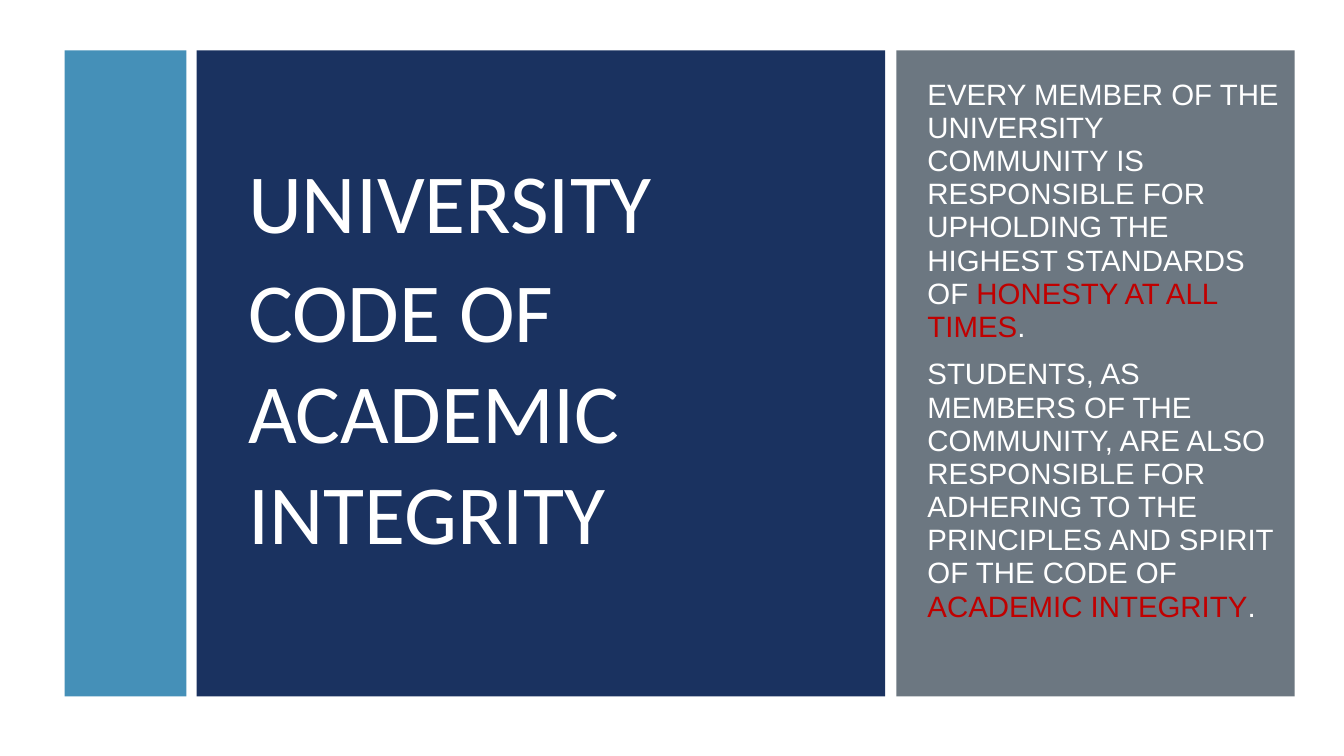
from pptx import Presentation
from pptx.dml.color import RGBColor
from pptx.enum.shapes import MSO_SHAPE
from pptx.enum.text import MSO_ANCHOR, MSO_AUTO_SIZE, PP_ALIGN
from pptx.util import Inches, Pt

WHITE, BLUE, NAVY, GREY, RED = "FFFFFF", "4590B8", "1A3260", "6C7781", "C00000"
PANEL_TOP, PANEL_HEIGHT = 0.5, 6.41


def paint(color_format, hex_color):
    color_format.rgb = RGBColor.from_string(hex_color)


class IntegritySlide:
    """Holds the style and the current slide."""

    heading_font, body_font = "Calibri", "Arial"
    heading_size, body_size = 60, 21

    def __init__(self, presentation):
        self.slide = presentation.slides.add_slide(presentation.slide_layouts[5])
        backdrop = self.slide.background.fill
        backdrop.solid()
        paint(backdrop.fore_color, WHITE)

    def panel(self, left, width, color):
        panel = self.slide.shapes.add_shape(
            MSO_SHAPE.RECTANGLE, Inches(left), Inches(PANEL_TOP),
            Inches(width), Inches(PANEL_HEIGHT))
        panel.shadow.inherit = False
        panel.fill.solid()
        paint(panel.fill.fore_color, color)
        panel.line.fill.background()

    def frame(self, holder):
        frame = holder.text_frame
        frame.word_wrap = True
        frame.auto_size = MSO_AUTO_SIZE.NONE
        frame.vertical_anchor = MSO_ANCHOR.MIDDLE
        return frame

    def format(self, paragraph, font_name, size):
        paragraph.alignment = PP_ALIGN.LEFT
        paragraph.space_after = Pt(6)
        paragraph.font.name = font_name
        paragraph.font.size = Pt(size)
        paint(paragraph.font.color, WHITE)

    def title(self, left, top, width, height, text):
        heading = self.slide.shapes.title
        heading.left, heading.top = Inches(left), Inches(top)
        heading.width, heading.height = Inches(width), Inches(height)
        frame = self.frame(heading)
        frame.text = text
        for paragraph in frame.paragraphs:
            self.format(paragraph, self.heading_font, self.heading_size)
        # Bring the title in front of the panels
        self.slide.shapes._spTree.append(heading._element)

    def statements(self, left, top, width, height, statements):
        box = self.slide.shapes.add_textbox(
            Inches(left), Inches(top), Inches(width), Inches(height))
        frame = self.frame(box)
        frame.margin_bottom = Inches(0.48)
        for index, (duty, emphasis) in enumerate(statements):
            paragraph = frame.add_paragraph() if index else frame.paragraphs[0]
            self.format(paragraph, self.body_font, self.body_size)
            paragraph.line_spacing = 0.94
            paragraph.space_before = Pt(0.2 * self.body_size)
            for text, color in ((duty, WHITE), (emphasis, RED), (".", WHITE)):
                run = paragraph.add_run()
                run.text = text
                paint(run.font.color, color)


def main():
    presentation = Presentation()
    presentation.slide_width = Inches(13.33)
    presentation.slide_height = Inches(7.5)
    integrity = IntegritySlide(presentation)

    # Colour panels
    for left, width, color in ((0.64, 1.21, BLUE), (1.95, 6.83, NAVY), (8.89, 3.95, GREY)):
        integrity.panel(left, width, color)

    # Title
    integrity.title(2.36, 0.93, 6.04, 5.19, "UNIVERSITY\nCODE OF ACADEMIC INTEGRITY")

    # Responsibilities, each ending in a highlighted phrase
    integrity.statements(9.1, 0.73, 3.75, 5.94, (
        ("EVERY MEMBER OF THE UNIVERSITY COMMUNITY IS RESPONSIBLE FOR "
         "UPHOLDING THE HIGHEST STANDARDS OF ", "HONESTY AT ALL TIMES"),
        ("STUDENTS, AS MEMBERS OF THE COMMUNITY, ARE ALSO RESPONSIBLE FOR ADHERING "
         "TO THE PRINCIPLES AND SPIRIT OF THE CODE OF ", "ACADEMIC INTEGRITY"),
    ))

    presentation.save("out.pptx")


if __name__ == "__main__":
    main()
